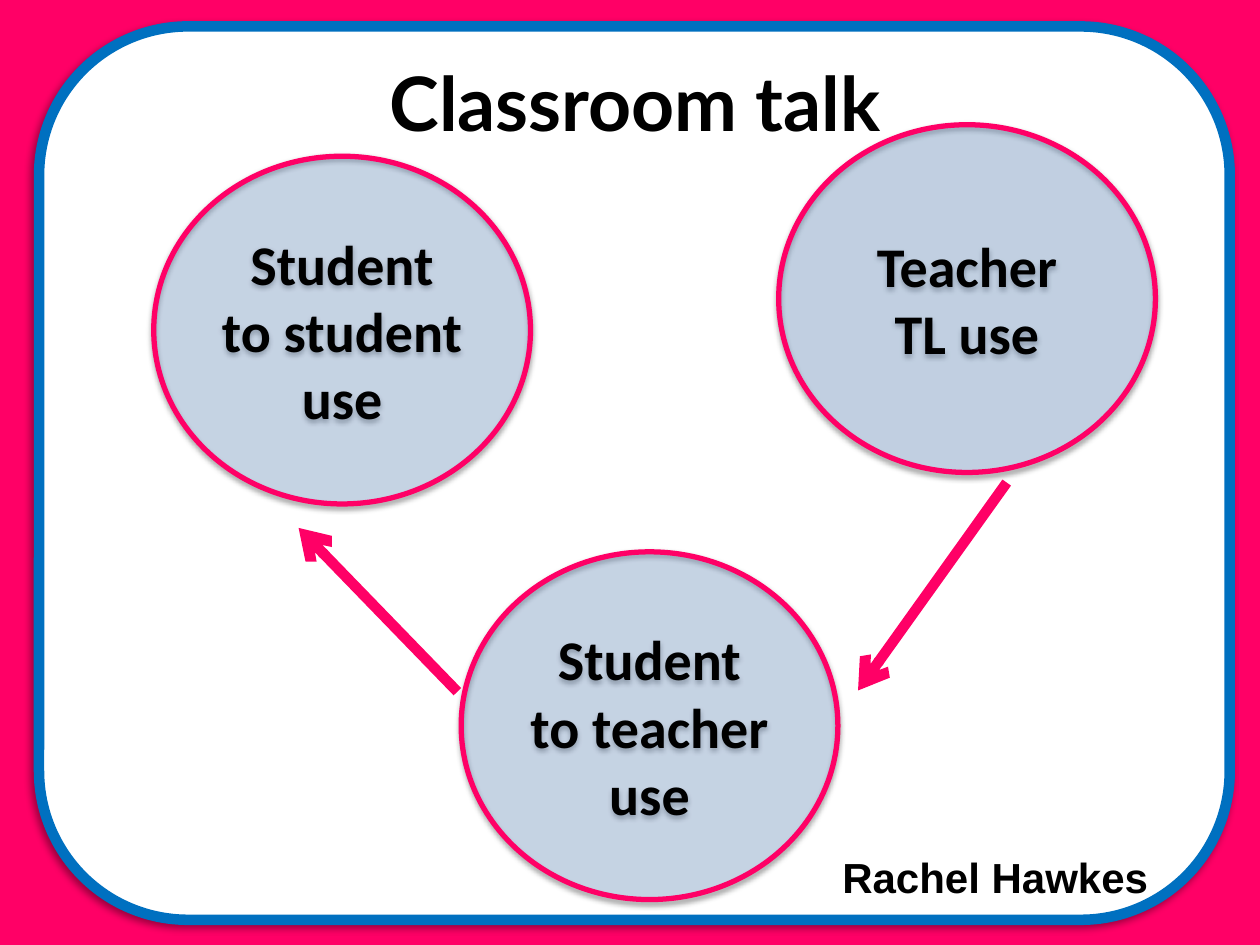
from dataclasses import dataclass

from pptx import Presentation
from pptx.dml.color import RGBColor
from pptx.enum.shapes import MSO_CONNECTOR, MSO_SHAPE
from pptx.enum.text import MSO_ANCHOR, MSO_AUTO_SIZE, PP_ALIGN
from pptx.oxml.ns import qn
from pptx.oxml.xmlchemy import OxmlElement
from pptx.util import Inches, Pt

PINK = RGBColor(0xFF, 0x00, 0x66)
BLUE = RGBColor(0x00, 0x70, 0xC0)
BUBBLE_BLUE = RGBColor(0x55, 0x8E, 0xD5)
WHITE = RGBColor(0xFF, 0xFF, 0xFF)
BLACK = RGBColor(0x00, 0x00, 0x00)

# The slide is a grid of 100 columns by 75 rows of square cells.
COLUMNS, ROWS = 100, 75
CELL = Inches(0.1)
BUBBLE_COLUMNS, BUBBLE_ROWS = 29.9, 27.6


@dataclass(frozen=True)
class Bubble:
    label: str
    column: float
    row: float
    opacity: int


@dataclass(frozen=True)
class Arrow:
    start: tuple[float, float]
    end: tuple[float, float]


@dataclass(frozen=True)
class Shadow:
    opacity: int
    blur: float
    distance: float
    angle: int


FRAME_SHADOW = Shadow(40, 4, 3, 135)
BUBBLE_SHADOW = Shadow(38, 3.1, 1.6, 90)
TITLE_SHADOW = Shadow(43, 3, 3, 45)

TEACHER = Bubble("Teacher TL use", 61.8, 9.9, 25)
STUDENT_TO_TEACHER = Bubble("Student to teacher use", 36.6, 43.8, 23)
STUDENT_TO_STUDENT = Bubble("Student to student use", 12.2, 12.4, 23)
TEACHER_TO_STUDENT_ARROW = Arrow((79.9, 38.3), (68.1, 54.8))
STUDENT_TO_STUDENT_ARROW = Arrow((36.3, 54.9), (23.7, 41.9))


def cells(*counts: float) -> list[int]:
    return [round(count * CELL) for count in counts]


def set_opacity(colour, percent: int) -> None:
    alpha = OxmlElement("a:alpha")
    alpha.set("val", str(percent * 1000))
    colour.append(alpha)


def add_shadow(effects, shadow: Shadow) -> None:
    outer = OxmlElement("a:outerShdw")
    outer.set("blurRad", str(Pt(shadow.blur)))
    outer.set("dist", str(Pt(shadow.distance)))
    outer.set("dir", str(shadow.angle * 60000))
    outer.set("rotWithShape", "0")
    colour = OxmlElement("a:srgbClr")
    colour.set("val", str(BLACK))
    set_opacity(colour, shadow.opacity)
    outer.append(colour)
    effects.append(outer)


def write(holder, text: str, *, font: str, size: float, align=PP_ALIGN.CENTER,
          anchor=MSO_ANCHOR.MIDDLE, autosize=MSO_AUTO_SIZE.NONE,
          shadow: Shadow | None = None) -> None:
    frame = holder.text_frame
    frame.word_wrap = True
    frame.auto_size = autosize
    frame.vertical_anchor = anchor
    paragraph = frame.paragraphs[0]
    paragraph.alignment = align
    run = paragraph.add_run()
    run.text = text
    run.font.size = Pt(size)
    run.font.bold = True
    run.font.color.rgb = BLACK
    run.font.name = font
    if shadow:
        effects = OxmlElement("a:effectLst")
        add_shadow(effects, shadow)
        run.font._element.find(qn("a:latin")).addprevious(effects)


def add_panel(slide, preset, place: list[int], fill: RGBColor, line: RGBColor,
              width: float, shadow: Shadow):
    panel = slide.shapes.add_shape(preset, *place)
    panel.fill.solid()
    panel.fill.fore_color.rgb = fill
    panel.line.color.rgb = line
    panel.line.width = Pt(width)
    panel.shadow.inherit = False
    add_shadow(panel.element.spPr.find(qn("a:effectLst")), shadow)
    return panel


def add_bubble(slide, bubble: Bubble) -> None:
    place = cells(bubble.column, bubble.row, BUBBLE_COLUMNS, BUBBLE_ROWS)
    oval = add_panel(slide, MSO_SHAPE.OVAL, place, BUBBLE_BLUE, PINK, 3, BUBBLE_SHADOW)
    fill = oval.element.spPr.find(qn("a:solidFill"))
    set_opacity(fill.find(qn("a:srgbClr")), bubble.opacity)
    write(oval, bubble.label, font="Calibri", size=32)


def add_arrow(slide, arrow: Arrow) -> None:
    connector = slide.shapes.add_connector(
        MSO_CONNECTOR.STRAIGHT, *cells(*arrow.start, *arrow.end))
    connector.line.color.rgb = PINK
    connector.line.width = Pt(6)
    head = OxmlElement("a:tailEnd")
    head.set("type", "arrow")
    connector.line._get_or_add_ln().append(head)
    connector.element.spPr.append(OxmlElement("a:effectLst"))


def main() -> None:
    deck = Presentation()
    deck.slide_width, deck.slide_height = cells(COLUMNS, ROWS)
    slide = deck.slides.add_slide(deck.slide_layouts[5])
    slide.background.fill.solid()
    slide.background.fill.fore_color.rgb = PINK

    card = add_panel(slide, MSO_SHAPE.ROUNDED_RECTANGLE, cells(3.1, 2.1, 94.5, 70.9),
                     WHITE, BLUE, 6, FRAME_SHADOW)
    author = slide.shapes.add_textbox(*cells(0, 67.1, 92.1, 5))
    write(author, "Rachel Hawkes", font="Arial", size=24, align=PP_ALIGN.RIGHT,
          anchor=MSO_ANCHOR.TOP, autosize=MSO_AUTO_SIZE.SHAPE_TO_FIT_TEXT)

    title = slide.shapes.title
    title.left, title.top, title.width, title.height = cells(5.4, 1.8, 90, 12.5)
    write(title, "Classroom talk", font="Lato", size=42.9, shadow=TITLE_SHADOW)
    title.element.addprevious(card.element)
    title.element.addprevious(author.element)

    add_bubble(slide, TEACHER)
    add_arrow(slide, TEACHER_TO_STUDENT_ARROW)
    add_bubble(slide, STUDENT_TO_TEACHER)
    add_bubble(slide, STUDENT_TO_STUDENT)
    add_arrow(slide, STUDENT_TO_STUDENT_ARROW)

    deck.save("out.pptx")


if __name__ == "__main__":
    main()
